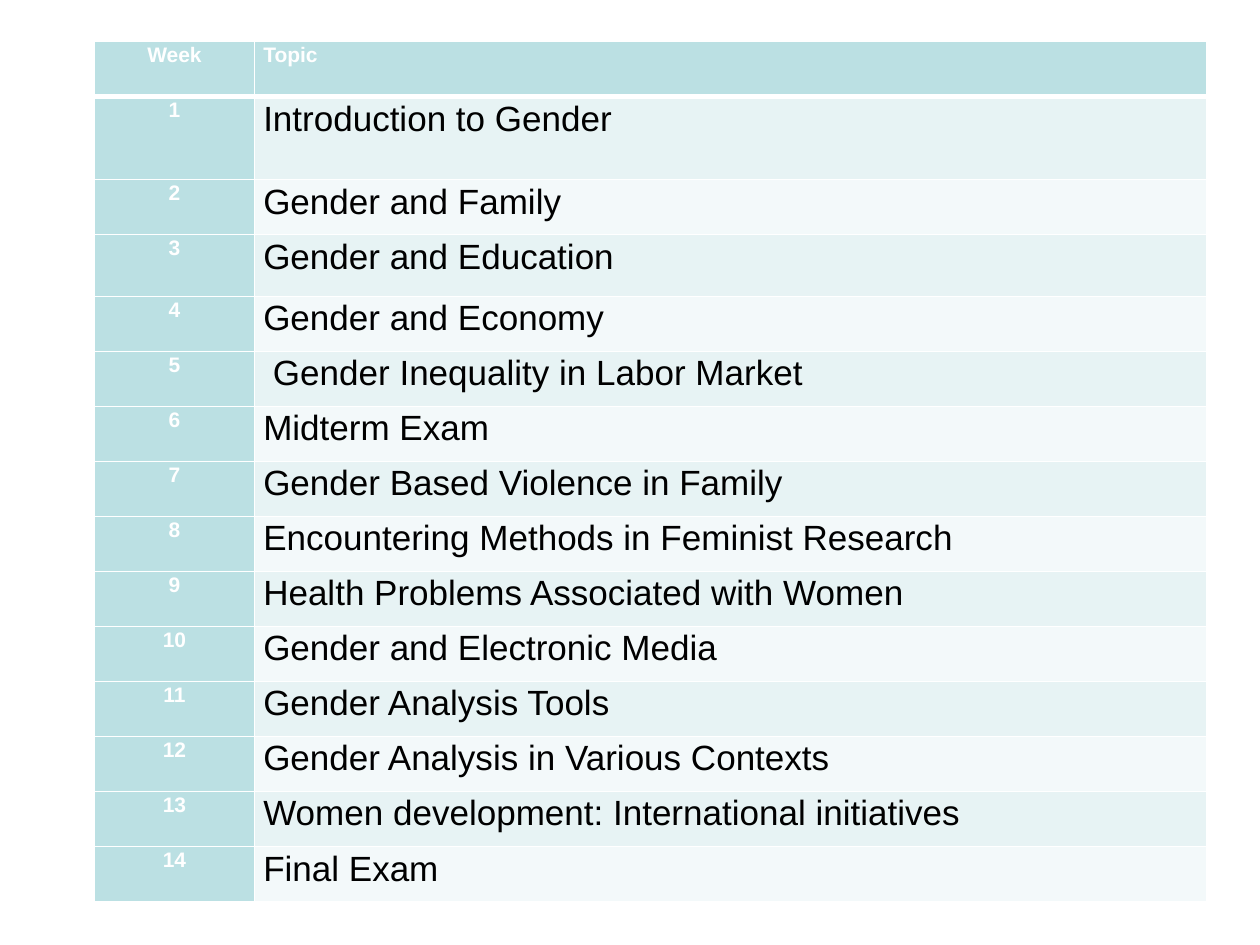
import pptx
import pptx.dml.color
import pptx.enum.text
import pptx.oxml.ns
import pptx.util
from lxml import etree

Inches = pptx.util.Inches
Pt = pptx.util.Pt
ALIGN = pptx.enum.text.PP_ALIGN

COLORS = {
    "accent": "BBE0E3",
    "odd_row": "E7F3F4",
    "even_row": "F3F9FA",
    "white": "FFFFFF",
    "black": "000000",
}
HEADINGS = ("Week", "Topic")
TOPICS = [
    "Introduction to Gender",
    "Gender and Family",
    "Gender and Education",
    "Gender and Economy",
    " Gender Inequality in Labor Market",
    "Midterm Exam",
    "Gender Based Violence in Family",
    "Encountering Methods in Feminist Research",
    "Health Problems Associated with Women",
    "Gender and Electronic Media",
    "Gender Analysis Tools",
    "Gender Analysis in Various Contexts",
    "Women development: International initiatives",
    "Final Exam",
]
WEEK_WIDTH = 1.27
TALL_ROWS = {1: 0.66, 3: 0.49}
CELL_FORMAT = {
    "margin_left": Inches(0.07),
    "margin_right": Inches(0.07),
    "margin_top": 0,
    "margin_bottom": 0,
}
LABEL_FONT = {"name": "Arial", "size": Pt(12), "bold": True}
TOPIC_FONT = {"name": "Arial", "size": Pt(20), "bold": False}


def rgb(name):
    return pptx.dml.color.RGBColor.from_string(COLORS[name])


def set_attributes(target, values):
    for name, value in values.items():
        setattr(target, name, value)


def set_borders(cell, widths):
    """Draw white borders, given widths in points by side (L, R, T, B)."""
    properties = cell._tc.get_or_add_tcPr()
    for side, width in widths.items():
        line = etree.SubElement(
            properties, pptx.oxml.ns.qn(f"a:ln{side}"), w=str(Pt(width)))
        fill = etree.SubElement(line, pptx.oxml.ns.qn("a:solidFill"))
        etree.SubElement(
            fill, pptx.oxml.ns.qn("a:srgbClr"), val=COLORS["white"])


def format_cell(cell, text, row, column):
    is_label = row == 0 or column == 0
    set_attributes(cell, CELL_FORMAT)
    set_borders(cell, {
        "L": 1,
        "R": 1,
        "T": 3 if row == 1 else 1,
        "B": 3 if row == 0 else 1,
    })
    band = "odd_row" if row % 2 else "even_row"
    cell.fill.solid()
    cell.fill.fore_color.rgb = rgb("accent" if is_label else band)

    paragraph = cell.text_frame.paragraphs[0]
    paragraph.alignment = ALIGN.LEFT if column else ALIGN.CENTER
    paragraph.line_spacing = 1.07
    run = paragraph.add_run()
    run.text = text
    set_attributes(run.font, LABEL_FONT if is_label else TOPIC_FONT)
    run.font.color.rgb = rgb("white" if is_label else "black")


def add_schedule(slide, left, top, width, height):
    records = [HEADINGS]
    records += [(str(week), topic) for week, topic in enumerate(TOPICS, 1)]
    table = slide.shapes.add_table(
        len(records), len(HEADINGS),
        Inches(left), Inches(top), Inches(width), Inches(height)).table
    table.columns[0].width = Inches(WEEK_WIDTH)
    table.columns[1].width = Inches(width - WEEK_WIDTH)

    plain_height = ((height - sum(TALL_ROWS.values()))
                    / (len(records) - len(TALL_ROWS)))
    for row, record in enumerate(records):
        table.rows[row].height = Inches(TALL_ROWS.get(row, plain_height))
        for column, text in enumerate(record):
            format_cell(table.cell(row, column), text, row, column)


def main():
    presentation = pptx.Presentation()
    presentation.slide_width = Inches(10)
    presentation.slide_height = Inches(7.5)
    slide = presentation.slides.add_slide(presentation.slide_layouts[6])
    add_schedule(slide, 0.75, 0.33, 8.83, 6.83)
    presentation.save("out.pptx")


if __name__ == "__main__":
    main()
